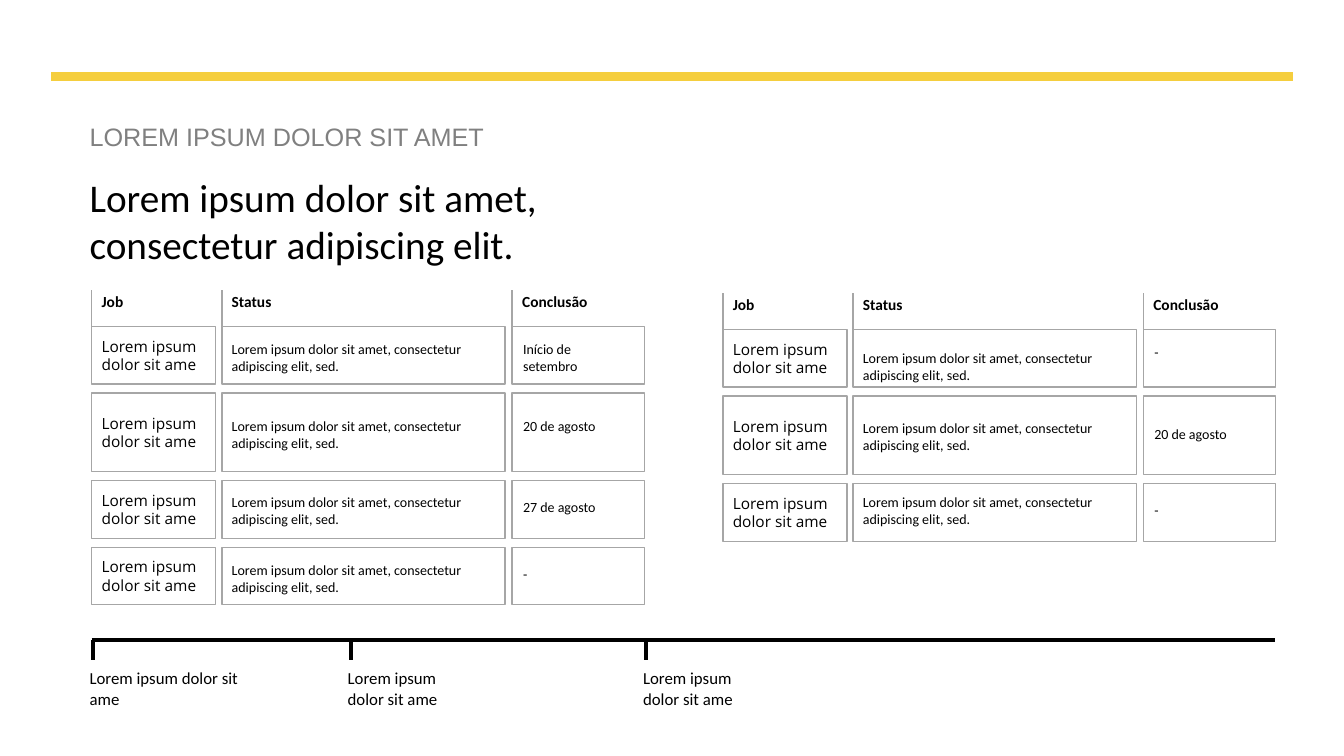
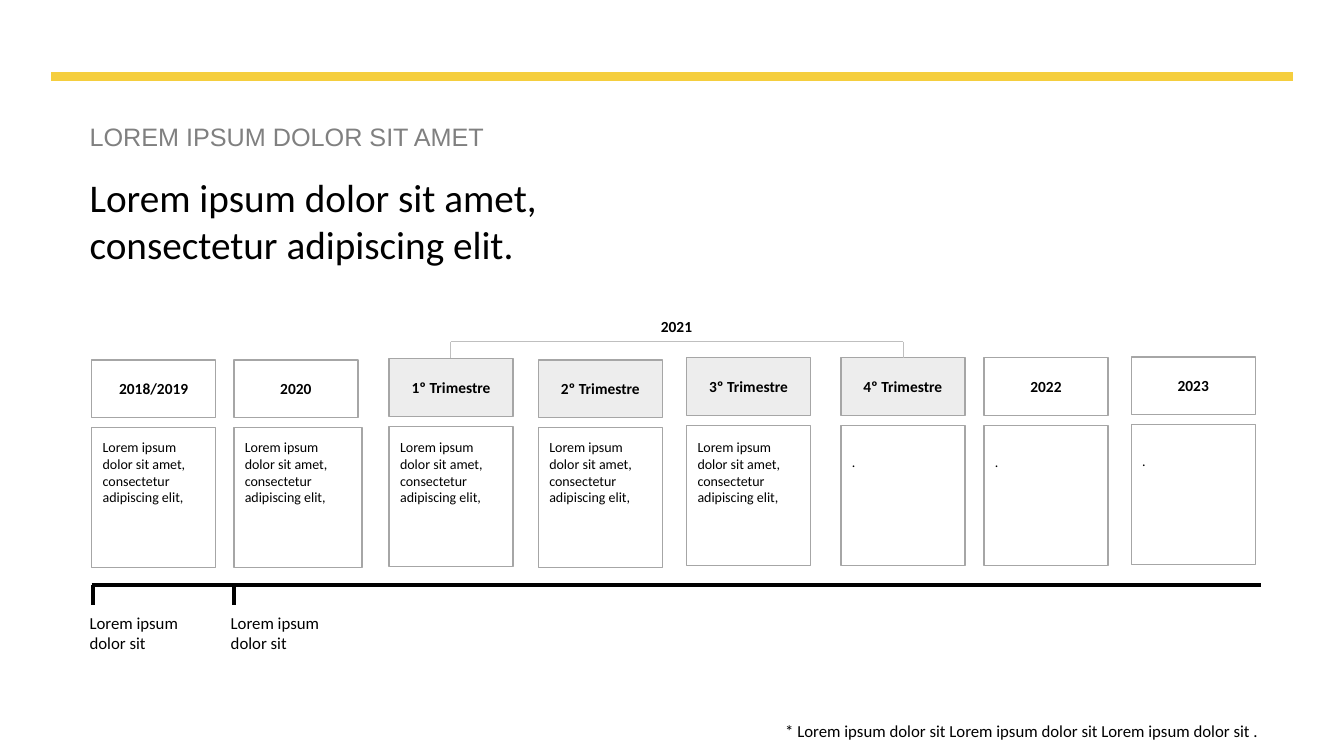
from lxml.etree import SubElement
from pptx import Presentation
from pptx.dml.color import RGBColor
from pptx.enum.shapes import MSO_CONNECTOR, MSO_SHAPE
from pptx.enum.text import MSO_ANCHOR, MSO_AUTO_SIZE, PP_ALIGN
from pptx.oxml.ns import qn
from pptx.util import Inches, Pt

YELLOW, GRAY, BORDER, BRACKET = "F5CE3E", "808080", "A6A6A6", "BFBFBF"
BLACK, WHITE, QUARTER = "000000", "FFFFFF", "EDEDED"

KICKER = "LOREM IPSUM DOLOR SIT AMET"
TITLE = "Lorem ipsum dolor sit amet, consectetur adipiscing elit."
JOB = "Lorem ipsum dolor sit ame"
STATUS = "Lorem ipsum dolor sit amet, consectetur adipiscing elit, sed."
DETAIL = "Lorem ipsum dolor sit amet, consectetur adipiscing elit,"
MILESTONE = "Lorem ipsum dolor sit"
FOOTNOTE = "* Lorem ipsum dolor sit Lorem ipsum dolor sit Lorem ipsum dolor sit ."

COLUMNS = [("Job", 0, 1.23, 0.8), ("Status", 1.29, 2.81, 0.8), ("Conclusão", 4.17, 1.31, 1.01)]
ROW_GAP = 0.09

# Each row: height, status text drop, completion text, completion text drop
JOB_BOARDS = [
    (0.91, 3.24, [
        (0.57, 0.09, "Início de setembro", 0.09),
        (0.78, 0.19, "20 de agosto", 0.19),
        (0.57, 0.08, "27 de agosto", 0.13),
        (0.57, 0.09, "-", 0.13),
    ]),
    (7.17, 3.27, [
        (0.57, 0.15, "-", 0.09),
        (0.78, 0.18, "20 de agosto", 0.24),
        (0.57, 0.05, "-", 0.13),
    ]),
]
JOB_MILESTONES = [(0.92, JOB, 1.68), (3.48, JOB, 1.45), (6.41, JOB, 1.36)]

# Each period: name, left, top, detail width, fill, detail
PERIODS = [
    ("2018/2019", 0.91, 3.57, 1.23, None, DETAIL),
    ("2020", 2.32, 3.57, 1.27, None, DETAIL),
    ("1º Trimestre", 3.86, 3.56, 1.23, QUARTER, DETAIL),
    ("2º Trimestre", 5.34, 3.57, 1.23, QUARTER, DETAIL),
    ("3º Trimestre", 6.81, 3.55, 1.23, QUARTER, DETAIL),
    ("4º Trimestre", 8.34, 3.55, 1.23, QUARTER, "."),
    ("2022", 9.76, 3.55, 1.23, None, "."),
    ("2023", 11.22, 3.54, 1.23, None, "."),
]
PERIOD_MILESTONES = [(0.92, MILESTONE, 1.23), (2.32, MILESTONE, 1.23)]


def color(value):
    return RGBColor.from_string(value)


def write(frame, text, size=10, font="Calibri", ink=BLACK, bold=False, align=PP_ALIGN.LEFT):
    frame.word_wrap = True
    paragraph = frame.paragraphs[0]
    paragraph.alignment = align
    run = paragraph.add_run()
    run.text = text
    run.font.size = Pt(size)
    run.font.name = font
    run.font.bold = bold
    run.font.color.rgb = color(ink)


def label(slide, left, top, width, height, text, **style):
    frame = slide.shapes.add_textbox(Inches(left), Inches(top), Inches(width), Inches(height)).text_frame
    write(frame, text, **style)
    frame.auto_size = MSO_AUTO_SIZE.SHAPE_TO_FIT_TEXT


def card(slide, left, top, width, height, text=None, fill=None, **style):
    kind = MSO_SHAPE.ROUNDED_RECTANGLE if text else MSO_SHAPE.RECTANGLE
    box = slide.shapes.add_shape(kind, Inches(left), Inches(top), Inches(width), Inches(height))
    box.shadow.inherit = False
    box.line.color.rgb = color(BORDER)
    box.line.width = Pt(1)
    if fill:
        box.fill.solid()
        box.fill.fore_color.rgb = color(fill)
    else:
        box.fill.background()
    if text:
        box.adjustments[0] = 0
        box.text_frame.vertical_anchor = MSO_ANCHOR.MIDDLE
        write(box.text_frame, text, **style)


def rule(slide, x1, y1, x2, y2, ink, weight):
    line = slide.shapes.add_connector(
        MSO_CONNECTOR.STRAIGHT, Inches(x1), Inches(y1), Inches(x2), Inches(y2))
    line.line.color.rgb = color(ink)
    line.line.width = Pt(weight)
    SubElement(line._element.spPr, qn("a:effectLst"))


def start_slide(deck):
    slide = deck.slides.add_slide(deck.slide_layouts[6])
    slide.background.fill.solid()
    slide.background.fill.fore_color.rgb = color(WHITE)
    rule(slide, 0.51, 0.76, 12.82, 0.76, YELLOW, 6)
    label(slide, 0.79, 1.15, 5.87, 0.4, KICKER, size=18, font="Arial", ink=GRAY)
    label(slide, 0.79, 1.67, 6.15, 1.04, TITLE, size=28)
    return slide


def timeline(slide, right, top, milestones):
    rule(slide, 0.91, top, right, top, BLACK, 3)
    for tick, text, width in milestones:
        rule(slide, tick, top, tick, top + 0.2, BLACK, 3)
        label(slide, tick - 0.13, top + 0.23, width, 0.5, text, size=12)


def job_board(slide, left, top, rows):
    for heading, offset, _, heading_width in COLUMNS:
        x = left + offset
        rule(slide, x, top - 0.36, x, top + 0.03, BORDER, 1)
        label(slide, x, top - 0.39, heading_width, 0.29, heading, size=11, bold=True)
    (job_x, job_w), (status_x, status_w), (done_x, done_w) = [
        (left + offset, width) for _, offset, width, _ in COLUMNS]
    for height, status_drop, done, done_drop in rows:
        card(slide, job_x, top, job_w, height, JOB, size=11, font="Open Sans")
        card(slide, status_x, top, status_w, height)
        card(slide, done_x, top, done_w, height)
        label(slide, status_x, top + status_drop, 2.75, 0.44, STATUS)
        label(slide, done_x + 0.01, top + done_drop, 1.2, 0.27, done)
        top += height + ROW_GAP


def jobs_slide(deck):
    slide = start_slide(deck)
    for board in JOB_BOARDS:
        job_board(slide, *board)
    timeline(slide, 12.65, 6.35, JOB_MILESTONES)


def periods_slide(deck):
    slide = start_slide(deck)
    for name, left, top, width, fill, detail in PERIODS:
        card(slide, left, top, 1.23, 0.57, name, fill, size=11, bold=True, align=PP_ALIGN.CENTER)
        card(slide, left, top + 0.67, width, 1.39)
        detail_top = 4.3 if detail == DETAIL else top + 0.9
        label(slide, left + 0.01, detail_top, 1.23, 0.27, detail)
    label(slide, 6.31, 3.1, 0.8, 0.29, "2021", size=11, bold=True, align=PP_ALIGN.CENTER)
    first, last, bracket_top = 4.47, 8.96, 3.39
    rule(slide, first, bracket_top, last, bracket_top, BRACKET, 0.5)
    for x in (first, last):
        rule(slide, x, bracket_top, x, 3.55, BRACKET, 0.5)
    timeline(slide, 12.51, 5.8, PERIOD_MILESTONES)
    label(slide, 6.94, 7.1, 5.64, 0.3, FOOTNOTE, size=12, align=PP_ALIGN.RIGHT)


def main():
    deck = Presentation()
    deck.slide_width, deck.slide_height = Inches(13.33), Inches(7.5)
    jobs_slide(deck)
    periods_slide(deck)
    deck.save("out.pptx")


if __name__ == "__main__":
    main()
